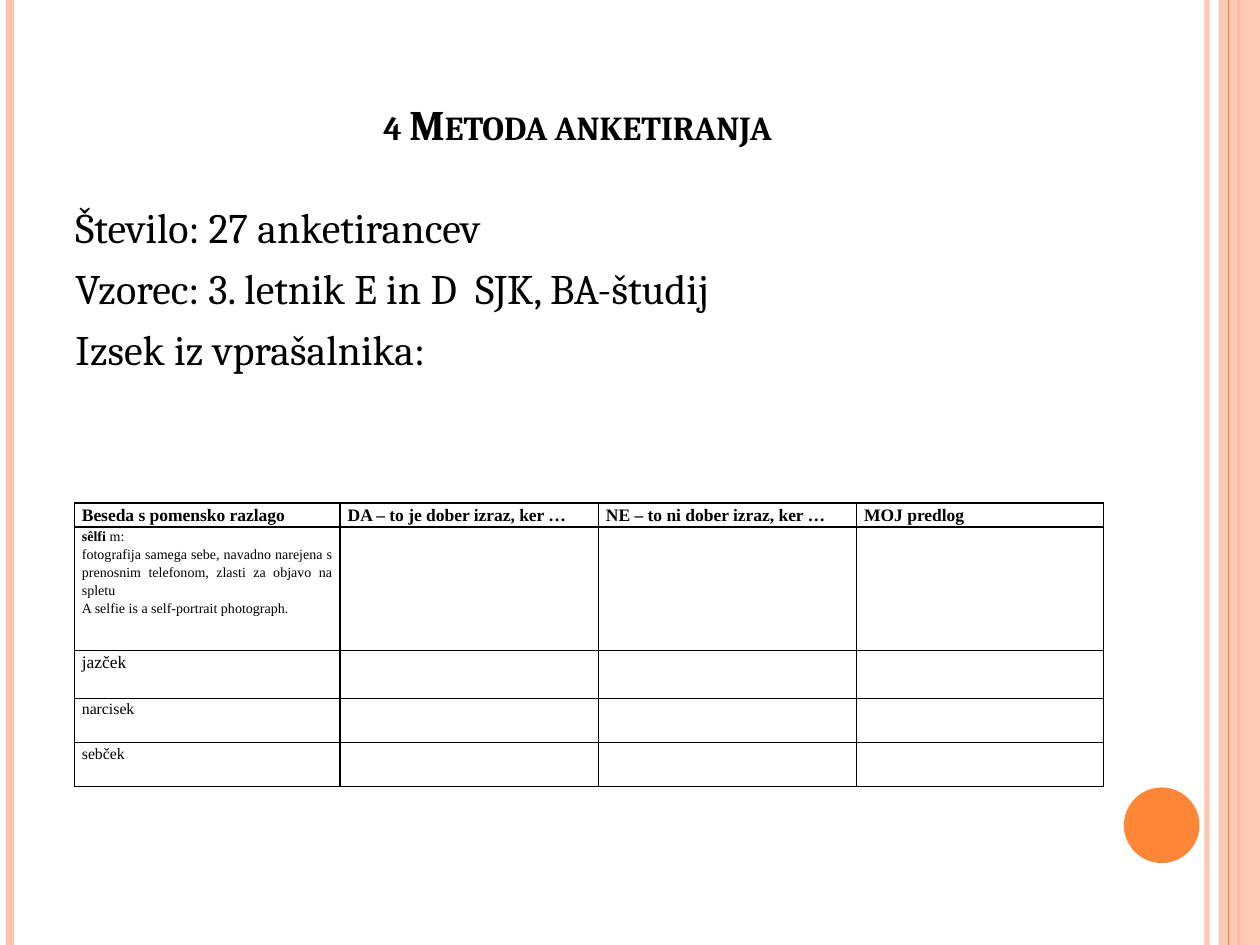
from dataclasses import dataclass
from typing import NamedTuple, Optional

from lxml.etree import SubElement
from pptx import Presentation
from pptx.dml.color import RGBColor
from pptx.enum.shapes import MSO_CONNECTOR as Connector, MSO_SHAPE as Shape
from pptx.enum.text import MSO_ANCHOR as Anchor, MSO_AUTO_SIZE as AutoSize, PP_ALIGN as Align
from pptx.oxml.ns import qn
from pptx.util import Inches, Pt


@dataclass(frozen=True)
class Theme:
    ink: RGBColor = RGBColor(0x00, 0x00, 0x00)
    peach: RGBColor = RGBColor(0xFE, 0xC3, 0xAE)
    orange: RGBColor = RGBColor(0xFE, 0x86, 0x37)
    text_font: str = "Cambria"
    table_font: str = "Times New Roman"
    text_size: float = 24
    table_size: float = 10
    word_size: float = 9
    gloss_size: float = 8
    border: float = 1


class Rail(NamedTuple):
    x: float
    color: RGBColor
    weight: float
    opacity: int = 100


class Entry(NamedTuple):
    """One paragraph of a table cell; the lead part is bold."""
    text: str
    size: float
    lead: str = ""
    align: Optional[Align] = None


THEME = Theme()
SLIDE_W, SLIDE_H = 10, 7.5

BACK_RAILS = [
    Rail(9.58, THEME.peach, 3, 93),
    Rail(0.08, THEME.peach, 4.5),
    Rail(9.83, THEME.orange, 1.5),
]
FRONT_RAIL = Rail(9.75, THEME.orange, 0.75)

FACTS = [
    "Število: 27 anketirancev",
    "Vzorec: 3. letnik E in D  SJK, BA-študij",
    "Izsek iz vprašalnika:",
]

HEADINGS = [
    "Beseda s pomensko razlago",
    "DA – to je dober izraz, ker …",
    "NE – to ni dober izraz, ker …",
    "MOJ predlog",
]
WORDS = [
    [
        Entry(" m:", THEME.gloss_size, lead="sêlfi"),
        Entry("fotografija samega sebe, navadno narejena s prenosnim telefonom, "
              "zlasti za objavo na spletu", THEME.gloss_size, align=Align.JUSTIFY),
        Entry("A selfie is a self-portrait photograph.", THEME.gloss_size),
    ],
    [Entry("jazček", THEME.table_size)],
    [Entry("narcisek", THEME.word_size)],
    [Entry("sebček", THEME.word_size)],
]
COLUMN_WIDTHS = [2.11, 2.05, 2.05, 1.96]
ROW_HEIGHTS = [0.19, 0.98, 0.38, 0.35, 0.35]


def set_font(font, name: str, size: float, bold: bool = False) -> None:
    font.name, font.size, font.bold = name, Pt(size), bold
    font.color.rgb = THEME.ink


def set_opacity(holder, percent: int) -> None:
    color = next(holder.iter(qn("a:srgbClr")))
    SubElement(color, qn("a:alpha")).set("val", str(percent * 1000))


def draw_rail(slide, rail: Rail) -> None:
    line = slide.shapes.add_connector(
        Connector.STRAIGHT, Inches(rail.x), 0, Inches(rail.x), Inches(SLIDE_H))
    line.line.color.rgb = rail.color
    line.line.width = Pt(rail.weight)
    properties = line._element.spPr
    if rail.opacity < 100:
        set_opacity(properties, rail.opacity)
    SubElement(properties, qn("a:effectLst"))


def draw_solid(slide, kind: Shape, left: float, top: float, width: float, height: float,
               color: RGBColor, opacity: int = 100) -> None:
    solid = slide.shapes.add_shape(
        kind, Inches(left), Inches(top), Inches(width), Inches(height))
    solid.shadow.inherit = False
    solid.fill.solid()
    solid.fill.fore_color.rgb = color
    solid.line.fill.background()
    if opacity < 100:
        set_opacity(solid._element.spPr, opacity)


def draw_title(slide, text: str) -> None:
    title = slide.shapes.title
    title.left, title.top = Inches(0.5), Inches(0.13)
    title.width, title.height = Inches(8.17), Inches(1.1)
    frame = title.text_frame
    frame.text = text
    frame.auto_size = AutoSize.NONE
    frame.vertical_anchor = Anchor.BOTTOM
    heading = frame.paragraphs[0]
    heading.alignment = Align.CENTER
    set_font(heading.font, THEME.text_font, THEME.text_size, bold=True)
    heading.font._element.set("cap", "small")


def draw_facts(slide) -> None:
    frame = slide.shapes.add_textbox(
        Inches(0.5), Inches(1.55), Inches(8.17), Inches(5.53)).text_frame
    frame.word_wrap = True
    frame.text = "\n".join(FACTS)
    for fact in frame.paragraphs:
        fact.space_before = Pt(6)
        set_font(fact.font, THEME.text_font, THEME.text_size)


def format_cell(cell) -> None:
    cell.fill.background()
    cell.margin_left = cell.margin_right = Inches(0.06)
    cell.margin_top = cell.margin_bottom = 0
    properties = cell._tc.get_or_add_tcPr()
    for index, side in enumerate(("lnL", "lnR", "lnT", "lnB")):
        border = properties.makeelement(qn(f"a:{side}"), {"w": str(Pt(THEME.border))})
        fill = SubElement(border, qn("a:solidFill"))
        SubElement(fill, qn("a:srgbClr")).set("val", str(THEME.ink))
        properties.insert(index, border)


def fill_cell(cell, entries: list[Entry], bold: bool = False) -> None:
    frame = cell.text_frame
    for index, entry in enumerate(entries):
        paragraph = frame.add_paragraph() if index else frame.paragraphs[0]
        paragraph.line_spacing = 1.15
        paragraph.alignment = entry.align
        set_font(paragraph.font, THEME.table_font, entry.size, bold)
        if entry.lead:
            lead = paragraph.add_run()
            lead.text = entry.lead
            lead.font.bold = True
        paragraph.add_run().text = entry.text


def draw_questionnaire(slide) -> None:
    table = slide.shapes.add_table(
        len(ROW_HEIGHTS), len(COLUMN_WIDTHS), Inches(0.59), Inches(3.99),
        Inches(sum(COLUMN_WIDTHS)), Inches(sum(ROW_HEIGHTS))).table
    table.first_row = table.horz_banding = False
    for column, width in zip(table.columns, COLUMN_WIDTHS):
        column.width = Inches(width)
    for row, height in zip(table.rows, ROW_HEIGHTS):
        row.height = Inches(height)
    for cell in table.iter_cells():
        format_cell(cell)
    for column, heading in enumerate(HEADINGS):
        fill_cell(table.cell(0, column), [Entry(heading, THEME.table_size)], bold=True)
    for row, entries in enumerate(WORDS, start=1):
        fill_cell(table.cell(row, 0), entries)


def main() -> None:
    deck = Presentation()
    deck.slide_width, deck.slide_height = Inches(SLIDE_W), Inches(SLIDE_H)
    slide = deck.slides.add_slide(deck.slide_layouts.get_by_name("Title Only"))

    # Side decoration
    for rail in BACK_RAILS:
        draw_rail(slide, rail)
    draw_solid(slide, Shape.RECTANGLE, 9.67, 0, 0.33, SLIDE_H, THEME.peach, opacity=87)
    draw_rail(slide, FRONT_RAIL)
    draw_solid(slide, Shape.OVAL, 8.92, 6.25, 0.6, 0.6, THEME.orange)

    # Content
    draw_title(slide, "4 Metoda anketiranja")
    draw_facts(slide)
    draw_questionnaire(slide)

    deck.save("out.pptx")


if __name__ == "__main__":
    main()
